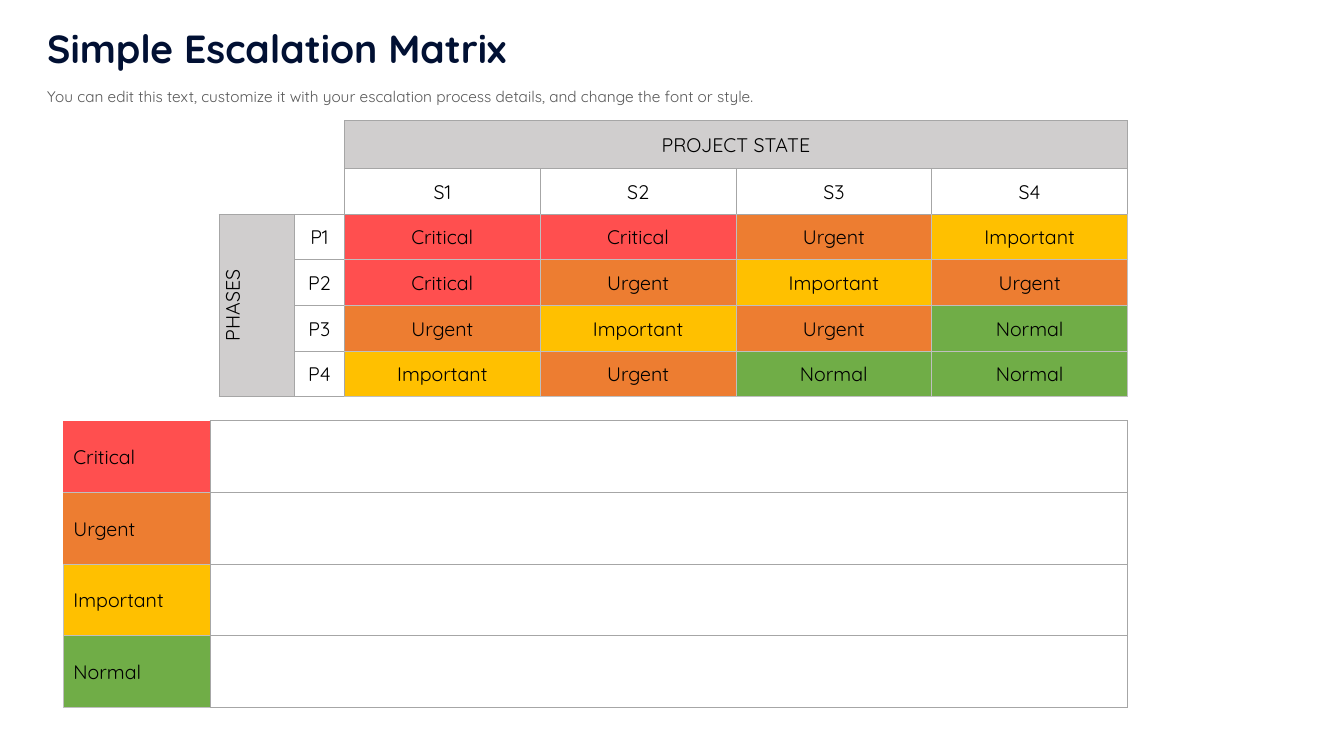
import pptx
import pptx.dml.color
import pptx.enum.text
import pptx.oxml
import pptx.oxml.ns
import pptx.util

Cm = pptx.util.Cm
RGBColor = pptx.dml.color.RGBColor
ANCHOR = pptx.enum.text.MSO_ANCHOR
ALIGN = pptx.enum.text.PP_ALIGN

FONT = "Quicksand"
NAVY = RGBColor(0x01, 0x10, 0x33)
BODY_GREY = RGBColor(0x59, 0x59, 0x59)
BLACK = RGBColor(0x00, 0x00, 0x00)
WHITE = RGBColor(0xFF, 0xFF, 0xFF)
HEADER_GREY = RGBColor(0xD0, 0xCE, 0xCE)
GRID = RGBColor(0xA6, 0xA6, 0xA6)
SOFT_GRID = RGBColor(0xBF, 0xBF, 0xBF)
LEVELS = {
    "Critical": RGBColor(0xFF, 0x4F, 0x4F),
    "Urgent": RGBColor(0xED, 0x7D, 0x31),
    "Important": RGBColor(0xFF, 0xC0, 0x00),
    "Normal": RGBColor(0x70, 0xAD, 0x47),
}
STATES = ["S1", "S2", "S3", "S4"]
PHASES = {
    "P1": ["Critical", "Critical", "Urgent", "Important"],
    "P2": ["Critical", "Urgent", "Important", "Urgent"],
    "P3": ["Urgent", "Important", "Urgent", "Normal"],
    "P4": ["Important", "Urgent", "Normal", "Normal"],
}


def add_span(para, text, size, color, bold=False):
    span = para.add_run()
    span.text = text
    span.font.name = FONT
    span.font.size = pptx.util.Pt(size)
    span.font.bold = bold
    span.font.color.rgb = color


def set_borders(cell, left=None, right=None, top=None, bottom=None):
    """Draw a thin line on each side with a colour; clear the others."""
    properties = cell._tc.get_or_add_tcPr()
    sides = {"lnL": left, "lnR": right, "lnT": top, "lnB": bottom}
    for place, (tag, color) in enumerate(sides.items()):
        paint = "<a:noFill/>"
        if color is not None:
            paint = f'<a:solidFill><a:srgbClr val="{color}"/></a:solidFill>'
        namespace = pptx.oxml.ns.nsdecls("a")
        line = pptx.oxml.parse_xml(f'<a:{tag} {namespace} w="6350">{paint}</a:{tag}>')
        properties.insert(place, line)


def set_cell(cell, text="", fill=None, align=ALIGN.CENTER, inset=0.03):
    cell.vertical_anchor = ANCHOR.MIDDLE
    cell.margin_left = Cm(inset)
    cell.margin_right = cell.margin_top = Cm(0.03)
    cell.margin_bottom = 0
    if fill is None:
        cell.fill.background()
    else:
        cell.fill.solid()
        cell.fill.fore_color.rgb = fill
    if text:
        para = cell.text_frame.paragraphs[0]
        para.alignment = align
        add_span(para, text, 14, BLACK)


def add_grid(page, left, top, widths, heights):
    frame = page.shapes.add_table(len(heights), len(widths), Cm(left), Cm(top),
                                  Cm(sum(widths)), Cm(sum(heights)))
    table = frame.table
    table.first_row = table.horz_banding = False
    for column, width in zip(table.columns, widths):
        column.width = Cm(width)
    for row, height in zip(table.rows, heights):
        row.height = Cm(height)
    return table


def add_text(page, left, top, width, height, text, size, color, bold, anchor):
    box = page.shapes.add_textbox(Cm(left), Cm(top), Cm(width), Cm(height))
    frame = box.text_frame
    frame.word_wrap = True
    frame.vertical_anchor = anchor
    frame.margin_bottom = Cm(0.15)
    add_span(frame.paragraphs[0], text, size, color, bold)


def add_heading(page, left, top):
    add_text(page, left, top, 12.4, 1.45, "Simple Escalation Matrix",
             28, NAVY, True, ANCHOR.TOP)
    add_text(page, left, top + 1.3, 19.61, 1.02,
             "You can edit this text, customize it with your escalation process "
             "details, and change the font or style.",
             11, BODY_GREY, False, ANCHOR.BOTTOM)


def add_matrix(page, left, top, width, height):
    phase_widths = [1.9, 1.26]
    state_width = (width - sum(phase_widths)) / len(STATES)
    header_height = 1.21
    row_height = (height - header_height) / (1 + len(PHASES))
    table = add_grid(page, left, top,
                     phase_widths + [state_width] * len(STATES),
                     [header_height] + [row_height] * (1 + len(PHASES)))

    # Open corner above the phases
    for row in range(2):
        for column in range(2):
            corner = table.cell(row, column)
            set_cell(corner, fill=WHITE if row else None)
            set_borders(corner, right=GRID if column else None,
                        bottom=GRID if row else None)

    # Project state headers
    for column, state in enumerate(STATES, start=2):
        title = "PROJECT STATE" if column == 2 else ""
        set_cell(table.cell(0, column), title, HEADER_GREY)
        set_cell(table.cell(1, column), state, WHITE)
        for row in range(2):
            set_borders(table.cell(row, column), GRID, GRID, GRID, GRID)
    table.cell(0, 2).merge(table.cell(0, 1 + len(STATES)))

    # Phase rows with their levels
    for row, (phase, levels) in enumerate(PHASES.items(), start=2):
        set_cell(table.cell(row, 0), "PHASES" if row == 2 else "", HEADER_GREY)
        set_cell(table.cell(row, 1), phase, WHITE)
        for column in range(2):
            set_borders(table.cell(row, column), GRID, GRID, GRID, GRID)
        for column, level in enumerate(levels, start=2):
            cell = table.cell(row, column)
            set_cell(cell, level, LEVELS[level])
            set_borders(cell, GRID if column == 2 else SOFT_GRID, SOFT_GRID,
                        GRID if row == 2 else SOFT_GRID, SOFT_GRID)
    phases = table.cell(2, 0)
    phases.merge(table.cell(1 + len(PHASES), 0))
    phases._tc.get_or_add_tcPr().set("vert", "vert270")


def add_legend(page, left, top, width, height):
    label_width = 3.69
    table = add_grid(page, left, top, [label_width, width - label_width],
                     [height / len(LEVELS)] * len(LEVELS))
    for row, (level, color) in enumerate(LEVELS.items()):
        label, detail = table.cell(row, 0), table.cell(row, 1)
        set_cell(label, level, color, ALIGN.LEFT, 0.25)
        set_borders(label, left=SOFT_GRID if row > 1 else None, right=GRID,
                    top=SOFT_GRID if row else None, bottom=SOFT_GRID)
        set_cell(detail)
        set_borders(detail, GRID, GRID, GRID, GRID)


def main():
    deck = pptx.Presentation()
    deck.slide_width, deck.slide_height = Cm(33.87), Cm(19.05)
    page = deck.slides.add_slide(deck.slide_layouts[6])
    add_heading(page, 0.94, 0.48)
    add_matrix(page, 5.52, 3.04, 22.9, 6.95)
    add_legend(page, 1.6, 10.6, 26.82, 7.22)
    deck.save("out.pptx")


if __name__ == "__main__":
    main()
